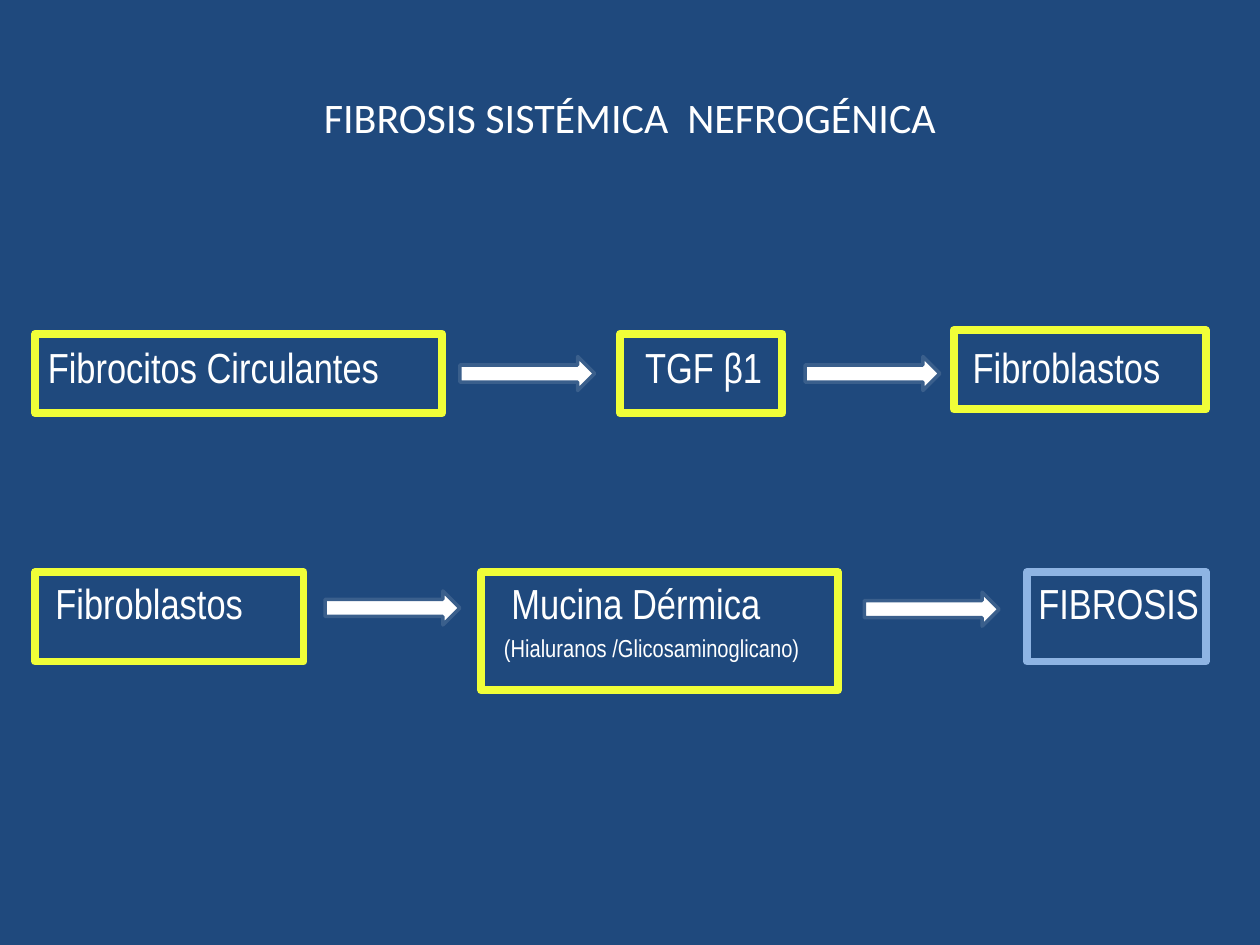
"""Build the slide on the steps of nephrogenic systemic fibrosis."""
from dataclasses import dataclass

import pptx
import pptx.dml.color
import pptx.enum.shapes
import pptx.enum.text
import pptx.shapes.autoshape
import pptx.slide
import pptx.text.text
import pptx.util

Inches = pptx.util.Inches
Pt = pptx.util.Pt
RGBColor = pptx.dml.color.RGBColor
Shapes = pptx.enum.shapes.MSO_SHAPE
Align = pptx.enum.text.PP_ALIGN
Anchor = pptx.enum.text.MSO_ANCHOR


@dataclass(frozen=True)
class Theme:
    background: RGBColor = RGBColor.from_string("1F497D")
    text: RGBColor = RGBColor.from_string("FFFFFF")
    arrow_line: RGBColor = RGBColor.from_string("3A5F8C")
    step: RGBColor = RGBColor.from_string("F0FE38")
    outcome: RGBColor = RGBColor.from_string("8EB4E3")
    title_font: str = "Calibri"
    body_font: str = "Arial Narrow"
    main_size: float = 24
    detail_size: float = 14
    box_line: float = 4.5
    arrow_line_width: float = 2


THEME = Theme()


@dataclass(frozen=True)
class Box:
    label: str
    left: float
    top: float
    width: float
    height: float
    text_left: float
    text_top: float
    color: RGBColor = THEME.step
    detail: str = ""
    label_indent: float = 0


@dataclass(frozen=True)
class Arrow:
    left: float
    top: float
    width: float = 1.07
    height: float = 0.27


ROW_1_TEXT, ROW_2_TEXT = 2.71, 4.58
BOXES = (
    Box("Fibrocitos Circulantes", 0.28, 2.65, 3.23, 0.63, 0.38, ROW_1_TEXT),
    Box("TGF β1", 4.92, 2.65, 1.29, 0.63, 5.12, ROW_1_TEXT),
    Box("Fibroblastos", 7.57, 2.62, 2, 0.63, 7.72, ROW_1_TEXT),
    Box("Fibroblastos", 0.28, 4.54, 2.13, 0.71, 0.44, ROW_2_TEXT),
    Box("Mucina Dérmica", 3.82, 4.54, 2.83, 0.94, 4.0, ROW_2_TEXT,
        detail="(Hialuranos /Glicosaminoglicano)", label_indent=0.06),
    Box("FIBROSIS", 8.15, 4.54, 1.42, 0.71, 8.24, ROW_2_TEXT, THEME.outcome),
)
ARROWS = (Arrow(3.65, 2.83), Arrow(6.39, 2.83), Arrow(2.58, 4.69), Arrow(6.86, 4.7))


def write_text(paragraph: pptx.text.text._Paragraph, text: str, *, font: str = THEME.body_font,
               size: float = THEME.main_size, align: Align = Align.LEFT,
               indent: float = 0, space_before: float = 0) -> None:
    """Write one formatted paragraph."""
    paragraph.alignment = align
    paragraph.space_before = Pt(space_before)
    if indent:
        paragraph._p.get_or_add_pPr().set("marL", str(Inches(indent)))
    run = paragraph.add_run()
    run.text = text
    run.font.name = font
    run.font.size = Pt(size)
    run.font.color.rgb = THEME.text


def add_title(slide: pptx.slide.Slide, text: str) -> None:
    """Add the centred slide title."""
    shape = slide.shapes.add_textbox(Inches(0.5), Inches(0.3), Inches(9), Inches(1.25))
    frame = shape.text_frame
    frame.word_wrap = True
    frame.vertical_anchor = Anchor.MIDDLE
    write_text(frame.paragraphs[0], text, font=THEME.title_font, align=Align.CENTER)


def add_outlined_shape(slide: pptx.slide.Slide, kind: Shapes, item: Box | Arrow,
                       color: RGBColor, line_width: float) -> pptx.shapes.autoshape.Shape:
    """Add a shadowless preset shape with a coloured outline."""
    shape = slide.shapes.add_shape(kind, Inches(item.left), Inches(item.top),
                                   Inches(item.width), Inches(item.height))
    shape.shadow.inherit = False
    shape.line.color.rgb = color
    shape.line.width = Pt(line_width)
    return shape


def add_box(slide: pptx.slide.Slide, box: Box) -> None:
    """Add an outlined step with its label and optional detail."""
    shape = add_outlined_shape(slide, Shapes.RECTANGLE, box, box.color, THEME.box_line)
    shape.fill.background()
    frame = shape.text_frame
    frame.word_wrap = True
    frame.vertical_anchor = Anchor.TOP
    frame.margin_left = Inches(box.text_left - box.left)
    frame.margin_top = Inches(box.text_top - box.top)
    frame.margin_right = frame.margin_bottom = 0
    write_text(frame.paragraphs[0], box.label, indent=box.label_indent)
    if box.detail:
        write_text(frame.add_paragraph(), box.detail, size=THEME.detail_size, space_before=3)


def add_arrow(slide: pptx.slide.Slide, arrow: Arrow) -> None:
    """Add a block arrow between two steps."""
    shape = add_outlined_shape(slide, Shapes.RIGHT_ARROW, arrow, THEME.arrow_line,
                               THEME.arrow_line_width)
    shape.fill.solid()
    shape.fill.fore_color.rgb = THEME.text


def main() -> None:
    """Create and save the presentation."""
    presentation = pptx.Presentation()
    presentation.slide_width = Inches(10)
    presentation.slide_height = Inches(7.5)
    slide = presentation.slides.add_slide(presentation.slide_layouts[6])
    slide.background.fill.solid()
    slide.background.fill.fore_color.rgb = THEME.background
    add_title(slide, "FIBROSIS SISTÉMICA  NEFROGÉNICA")
    for arrow in ARROWS:
        add_arrow(slide, arrow)
    for box in BOXES:
        add_box(slide, box)
    presentation.save("out.pptx")


if __name__ == "__main__":
    main()
